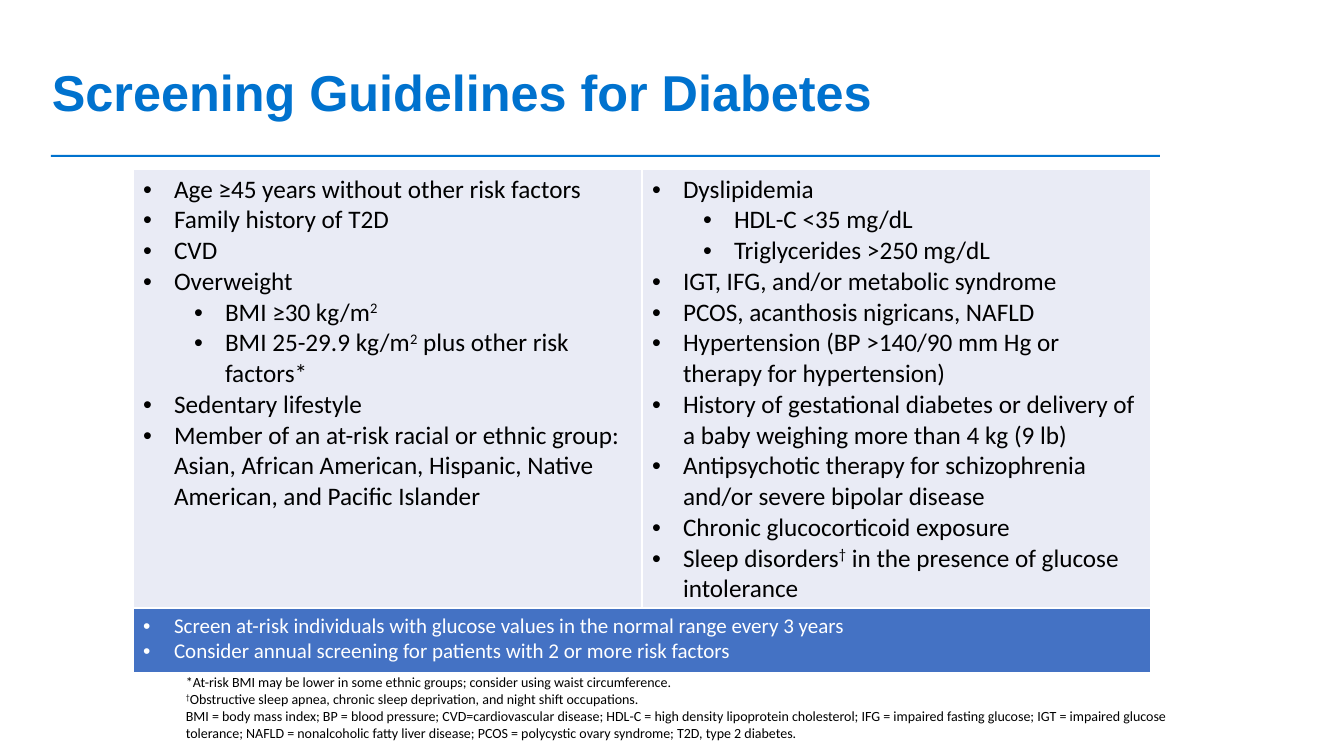
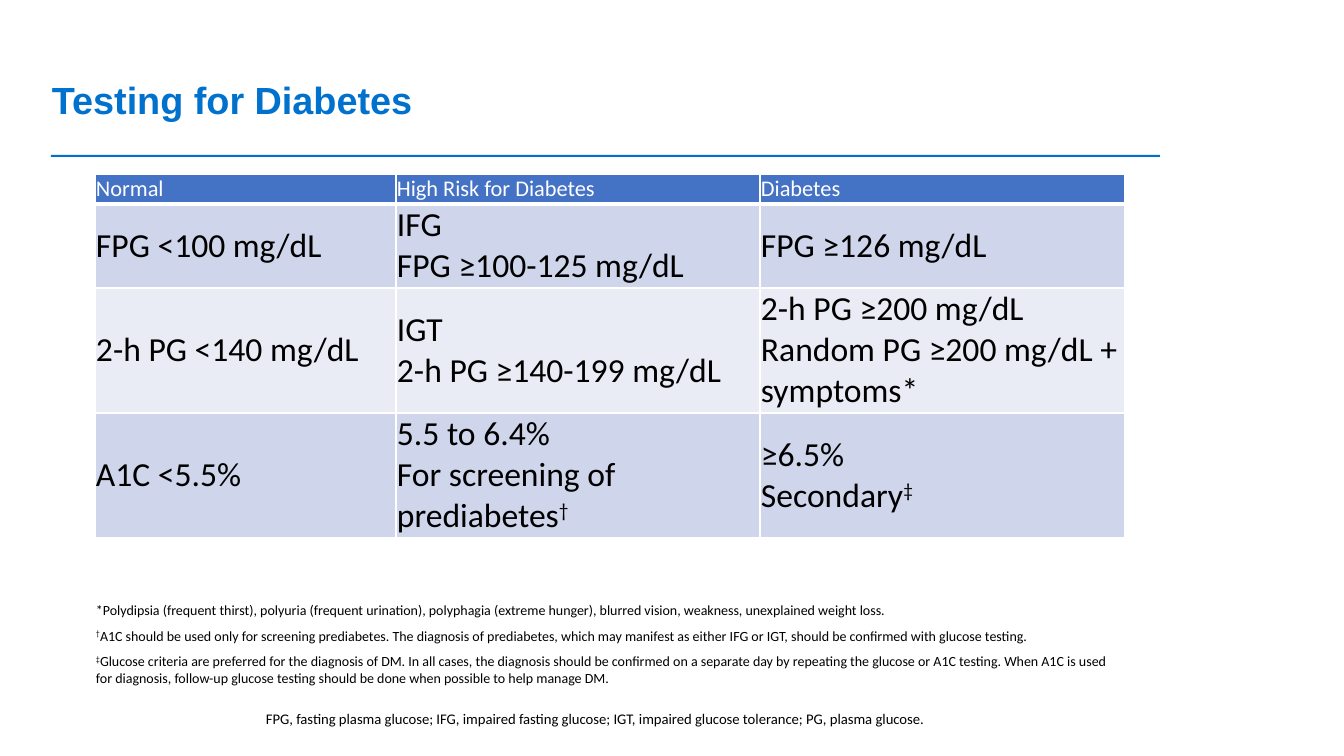
from dataclasses import dataclass
from typing import NamedTuple

from lxml.etree import SubElement
from pptx import Presentation
from pptx.dml.color import RGBColor as Rgb
from pptx.enum.shapes import MSO_SHAPE as Shape
from pptx.enum.text import MSO_ANCHOR as Anchor, MSO_AUTO_SIZE as AutoSize
from pptx.oxml.ns import qn
from pptx.util import Emu, Pt

EMU_PER_PX = 914400 / 100.8


@dataclass(frozen=True)
class Theme:
    """Colours, fonts and type sizes shared by the slides."""
    accent: str = "0072CE"
    band: str = "4472C4"
    tint: str = "CFD5EA"
    pale: str = "E9EBF5"
    ink: str = "000000"
    paper: str = "FFFFFF"
    heading_font: str = "Arial"
    body_font: str = "Calibri"
    title: float = 36
    short_title: float = 27
    value: float = 24
    criteria: float = 18
    column_head: float = 16
    advice: float = 15
    abbreviation: float = 10.5
    note: float = 10


class Box(NamedTuple):
    """A region of the slide in px."""
    left: int
    top: int
    width: int
    height: int


THEME = Theme()
HEADER = Box(42, 40, 1118, 117)
GUIDELINES = Box(133, 169, 1018, 504)
GUIDELINE_NOTES = Box(176, 668, 1003, 78)
TESTS = Box(95, 174, 1030, 578)
TEST_ABBREVIATIONS = Box(256, 704, 832, 28)

RISK_FACTORS = [
    [
        (0, "Age ≥45 years without other risk factors"),
        (0, "Family history of T2D"),
        (0, "CVD"),
        (0, "Overweight"),
        (1, "BMI ≥30 kg/m^2^"),
        (1, "BMI 25-29.9 kg/m^2^ plus other risk factors*"),
        (0, "Sedentary lifestyle"),
        (0, "Member of an at-risk racial or ethnic group: Asian, African American, "
            "Hispanic, Native American, and Pacific Islander"),
    ],
    [
        (0, "Dyslipidemia"),
        (1, "HDL-C <35 mg/dL"),
        (1, "Triglycerides >250 mg/dL"),
        (0, "IGT, IFG, and/or metabolic syndrome"),
        (0, "PCOS, acanthosis nigricans, NAFLD"),
        (0, "Hypertension (BP >140/90 mm Hg or therapy for hypertension)"),
        (0, "History of gestational diabetes or delivery of a baby weighing more "
            "than 4 kg (9 lb)"),
        (0, "Antipsychotic therapy for schizophrenia and/or severe bipolar disease"),
        (0, "Chronic glucocorticoid exposure"),
        (0, "Sleep disorders^†^ in the presence of glucose intolerance"),
    ],
]
SCREENING_ADVICE = [
    (0, "Screen at-risk individuals with glucose values in the normal range every 3 years"),
    (0, "Consider annual screening for patients with 2 or more risk factors"),
]
RISK_NOTES = [
    "*At-risk BMI may be lower in some ethnic groups; consider using waist circumference.",
    "^†^Obstructive sleep apnea, chronic sleep deprivation, and night shift occupations.",
    "BMI = body mass index; BP = blood pressure; CVD=cardiovascular disease; HDL-C = high "
    "density lipoprotein cholesterol; IFG = impaired fasting glucose; IGT = impaired glucose "
    "tolerance; NAFLD = nonalcoholic fatty liver disease; PCOS = polycystic ovary syndrome; "
    "T2D, type 2 diabetes.",
]
TEST_RESULTS = [
    [["Normal"], ["High Risk for Diabetes"], ["Diabetes"]],
    [["FPG <100 mg/dL"], ["IFG", "FPG ≥100-125 mg/dL"], ["FPG ≥126 mg/dL"]],
    [["2-h PG <140 mg/dL"], ["IGT", "2-h PG ≥140-199 mg/dL"],
     ["2-h PG ≥200 mg/dL", "Random PG ≥200 mg/dL + symptoms*"]],
    [["A1C <5.5%"], ["5.5 to 6.4%", "For screening of prediabetes^†^"],
     ["≥6.5%", "Secondary^‡^"]],
]
TEST_NOTES = [
    "*Polydipsia (frequent thirst), polyuria (frequent urination), polyphagia (extreme "
    "hunger), blurred vision, weakness, unexplained weight loss.",
    "^†^A1C should be used only for screening prediabetes. The diagnosis of prediabetes, which "
    "may manifest as either IFG or IGT, should be confirmed with glucose testing.",
    "^‡^Glucose criteria are preferred for the diagnosis of DM. In all cases, the diagnosis "
    "should be confirmed on a separate day by repeating the glucose or A1C testing. When A1C is "
    "used for diagnosis, follow-up glucose testing should be done when possible to help manage DM.",
]
ABBREVIATIONS = [
    "FPG, fasting plasma glucose; IFG, impaired fasting glucose; IGT, impaired glucose "
    "tolerance; PG, plasma glucose.",
]


def px(length):
    """Turn px into EMU."""
    return Emu(round(length * EMU_PER_PX))


def apply(target, values):
    """Set each attribute named in a dict."""
    for name, value in values.items():
        setattr(target, name, value)


def write(paragraph, text, size, color=THEME.ink, font=THEME.body_font, bold=False):
    """Write text in which carets enclose superscripts."""
    for index, part in enumerate(text.split("^")):
        if part:
            run = paragraph.add_run()
            run.text = part
            apply(run.font, {"size": Pt(size), "name": font, "bold": bold})
            run.font.color.rgb = Rgb.from_string(color)
            if index % 2:
                run.font._element.set("baseline", "30000")


def write_lines(frame, lines, size, color=THEME.ink, gap=0):
    """Write one paragraph per line, with a gap between them."""
    for index, line in enumerate(lines):
        paragraph = frame.add_paragraph() if index else frame.paragraphs[0]
        if index and gap:
            paragraph.space_before = Pt(gap)
        write(paragraph, line, size, color)


def write_bullets(frame, items, size, color=THEME.ink):
    """Write a bulleted list of levels and texts."""
    for index, (level, text) in enumerate(items):
        paragraph = frame.add_paragraph() if index else frame.paragraphs[0]
        paragraph.level = level
        properties = paragraph._p.get_or_add_pPr()
        for name, length in {"marL": 31 + 51 * level, "indent": -31}.items():
            properties.set(name, str(px(length)))
        SubElement(properties, qn("a:buFont"), typeface="Arial")
        SubElement(properties, qn("a:buChar"), char="•")
        write(paragraph, text, size, color)


def add_text(slide, box, values):
    """Add a wrapping text box and return its frame."""
    frame = slide.shapes.add_textbox(*map(px, box)).text_frame
    apply(frame, {"word_wrap": True, **values})
    return frame


def add_header(slide, box, title, size):
    """Add the title and the rule below it."""
    frame = add_text(slide, Box(box.left, box.top, 1008, box.height - 4),
                     {"vertical_anchor": Anchor.MIDDLE})
    heading = frame.paragraphs[0]
    heading.line_spacing = Pt(36)
    write(heading, title, size, THEME.accent, THEME.heading_font, True)
    rule = slide.shapes.add_shape(Shape.RECTANGLE, px(box.left + 9), px(box.top + box.height - 2),
                                  px(box.width - 9), px(2))
    rule.shadow.inherit = False
    rule.fill.solid()
    rule.fill.fore_color.rgb = Rgb.from_string(THEME.accent)
    rule.line.fill.background()


def add_grid(slide, box, widths, heights):
    """Add a plain table with the given column widths and row heights."""
    grid = slide.shapes.add_table(len(heights), len(widths), *map(px, box)).table
    apply(grid, {"first_row": False, "horz_banding": False})
    for column, width in zip(grid.columns, widths):
        column.width = px(width)
    for row, height in zip(grid.rows, heights):
        row.height = px(height)
    return grid


def style_cell(cell, fill=None, bottom=1, values=None):
    """Give a cell white borders, a fill and its format values."""
    properties = cell._tc.get_or_add_tcPr()
    for side, width in {"L": 1, "R": 1, "T": 1, "B": bottom}.items():
        border = SubElement(properties, qn(f"a:ln{side}"), w=str(Pt(width)))
        paint = SubElement(border, qn("a:solidFill"))
        SubElement(paint, qn("a:srgbClr"), val=THEME.paper)
    if fill:
        cell.fill.solid()
        cell.fill.fore_color.rgb = Rgb.from_string(fill)
    else:
        cell.fill.background()
    apply(cell, values or {})


def add_guidelines(slide, box):
    """Add the risk factors above the band of screening advice."""
    advice_height = 65
    grid = add_grid(slide, box, [box.width // 2] * 2,
                    [box.height - advice_height, advice_height])
    for column, factors in enumerate(RISK_FACTORS):
        cell = grid.cell(0, column)
        style_cell(cell, THEME.pale)
        write_bullets(cell.text_frame, factors, THEME.criteria)
    advice = grid.cell(1, 0)
    advice.merge(grid.cell(1, 1))
    style_cell(advice, THEME.band)
    write_bullets(advice.text_frame, SCREENING_ADVICE, THEME.advice, THEME.paper)


def add_tests(slide, box):
    """Add the test results with their notes in the last row."""
    heights = [30, 84, 125, 125]
    grid = add_grid(slide, box, [301, 364, box.width - 665],
                    heights + [box.height - sum(heights)])
    margins = {f"margin_{side}": px(1) for side in ("left", "top", "right", "bottom")}
    values = {"vertical_anchor": Anchor.MIDDLE, **margins}
    for row, results in enumerate(TEST_RESULTS):
        is_head = row == 0
        fill = THEME.band if is_head else THEME.tint if row % 2 else THEME.pale
        size, color = ((THEME.column_head, THEME.paper) if is_head
                       else (THEME.value, THEME.ink))
        for column, lines in enumerate(results):
            cell = grid.cell(row, column)
            style_cell(cell, fill, 3 if is_head else 1, values)
            write_lines(cell.text_frame, lines, size, color)
    notes = grid.cell(len(heights), 0)
    notes.merge(grid.cell(len(heights), 2))
    style_cell(notes, values=values)
    write_lines(notes.text_frame, TEST_NOTES, THEME.note, gap=6)


def add_footnotes(slide, box, lines, size):
    """Add small print that stands on the bottom of its box."""
    frame = add_text(slide, box, {"vertical_anchor": Anchor.BOTTOM,
                                  "auto_size": AutoSize.SHAPE_TO_FIT_TEXT})
    write_lines(frame, lines, size)


def build_screening(slide):
    """Build the slide of screening guidelines."""
    add_header(slide, HEADER, "Screening Guidelines for Diabetes", THEME.title)
    add_guidelines(slide, GUIDELINES)
    add_footnotes(slide, GUIDELINE_NOTES, RISK_NOTES, THEME.note)


def build_testing(slide):
    """Build the slide of test results."""
    add_header(slide, HEADER, "Testing for Diabetes", THEME.short_title)
    add_tests(slide, TESTS)
    add_footnotes(slide, TEST_ABBREVIATIONS, ABBREVIATIONS, THEME.abbreviation)


def main():
    """Build and save the presentation."""
    deck = Presentation()
    apply(deck, {"slide_width": px(1344), "slide_height": px(756)})
    for build in (build_screening, build_testing):
        build(deck.slides.add_slide(deck.slide_layouts[6]))
    deck.save("out.pptx")


if __name__ == "__main__":
    main()
